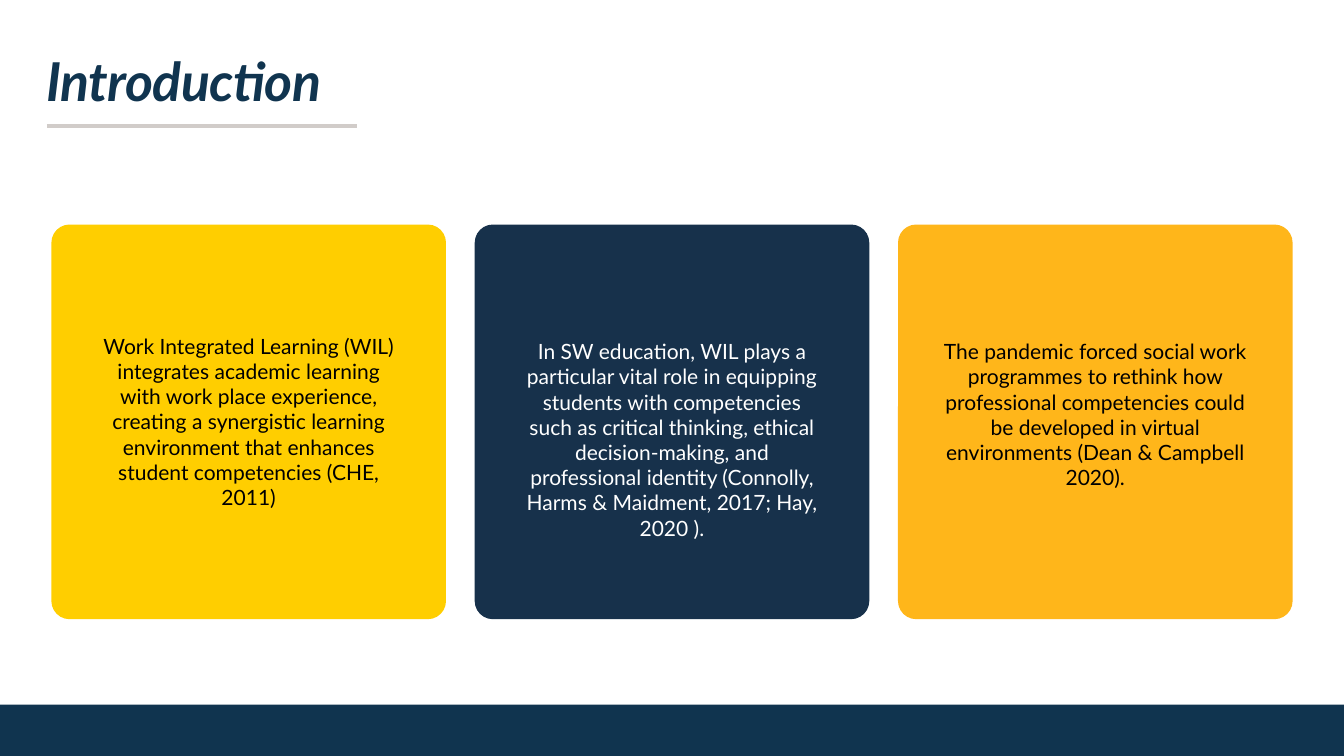
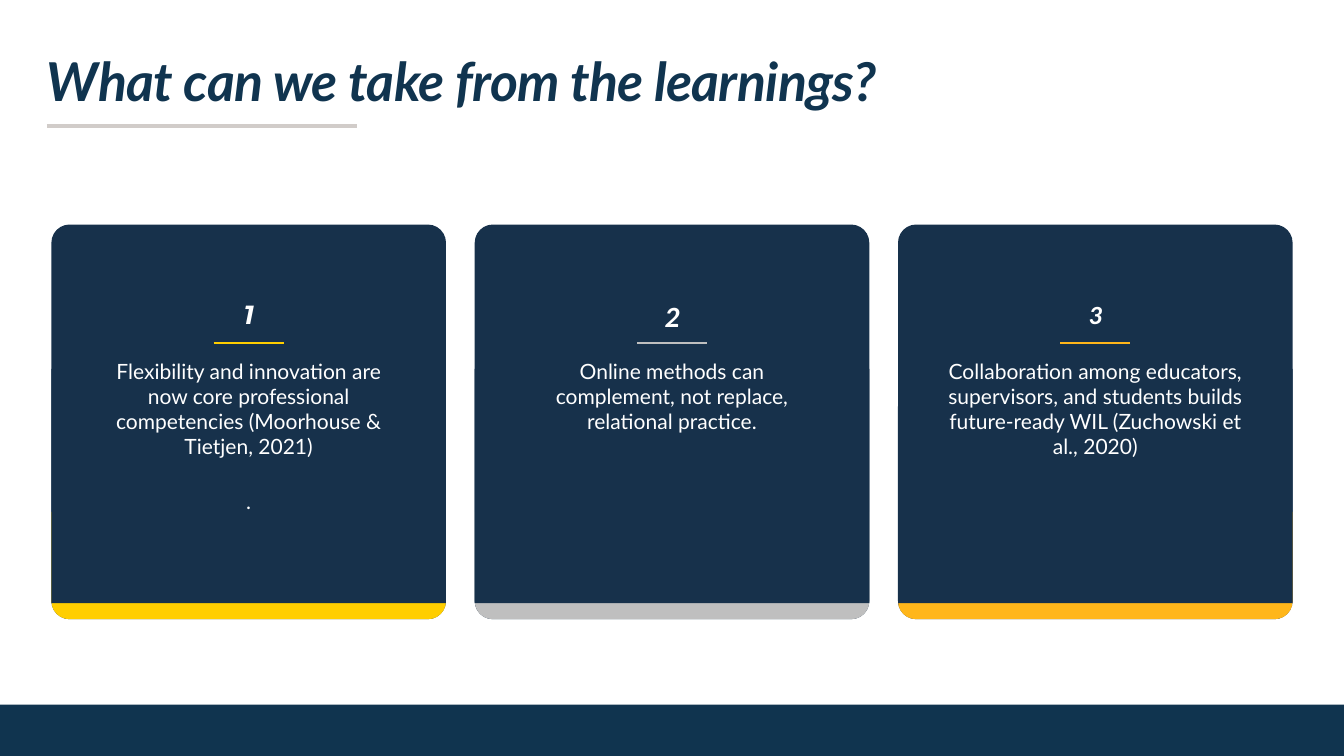
from dataclasses import dataclass

from lxml import etree
from pptx import Presentation
from pptx import util as u
from pptx.dml.color import RGBColor
from pptx.enum import shapes, text
from pptx.oxml.ns import qn


@dataclass(frozen=True)
class Theme:
    navy: str = "10344F"
    card: str = "17314B"
    yellow: str = "FFCE00"
    amber: str = "FFB61A"
    grey: str = "BFBFBF"
    rule: str = "D1CCC9"
    white: str = "FFFFFF"
    black: str = "000000"
    font: str = "Lato"
    title_size: int = 51
    body_size: int = 20


THEME = Theme()
WIDTH, HEIGHT = 17.78, 10

# Grid: three equal square cards in one row
MARGIN, TITLE_LEFT = 0.68, 0.62
CARD, CARD_TOP, COLUMNS = 5.22, 2.97, 3
PITCH = (WIDTH - 2 * MARGIN - CARD) / (COLUMNS - 1)
CORNER = 0.24
BAND, BAND_SHAPE = 0.21, 1.42
TEXT_WIDTH, NUMBER_WIDTH, RULE_WIDTH = 4.03, 3.54, 0.93


def column_left(column):
    return MARGIN + column * PITCH


def centred_left(column, width):
    return column_left(column) + (CARD - width) / 2


def add_block(page, kind, left, top, width, height, fill):
    block = page.shapes.add_shape(kind, *map(u.Inches, (left, top, width, height)))
    block.shadow.inherit = False
    block.fill.solid()
    block.fill.fore_color.rgb = RGBColor.from_string(fill)
    block.line.fill.background()
    return block


def add_rule(page, left, top, width, color, weight):
    line = page.shapes.add_connector(
        shapes.MSO_CONNECTOR.STRAIGHT,
        *map(u.Inches, (left, top, left + width, top)))
    line.line.color.rgb = RGBColor.from_string(color)
    line.line.width = u.Pt(weight)
    etree.SubElement(line._element.spPr, qn("a:effectLst"))


def add_text(page, words, left, top, width, height, *, size=THEME.body_size,
             font=THEME.font, color=THEME.white, strong=False, centred=True,
             spacing=None, gap=0):
    """Write one paragraph per line of words; gap is the space between them."""
    box = page.shapes.add_textbox(*map(u.Inches, (left, top, width, height)))
    frame = box.text_frame
    frame.word_wrap = True
    frame.auto_size = text.MSO_AUTO_SIZE.SHAPE_TO_FIT_TEXT
    frame.margin_left = frame.margin_right = frame.margin_bottom = 0
    frame.margin_top = u.Inches(0.01)
    for index, line in enumerate(words.split("\n")):
        para = frame.add_paragraph() if index else frame.paragraphs[0]
        para.alignment = text.PP_ALIGN.CENTER if centred else text.PP_ALIGN.LEFT
        if index:
            para.space_before = u.Pt(gap)
        span = para.add_run()
        span.text = line
        span.font.name, span.font.size = font, u.Pt(size)
        span.font.bold = span.font.italic = strong
        span.font.color.rgb = RGBColor.from_string(color)
        if spacing is not None:
            span._r.get_or_add_rPr().set("spc", str(int(spacing * 100)))


def add_page(deck, title):
    """Start a page with the shared footer band, title and title rule."""
    page = deck.slides.add_slide(deck.slide_layouts[6])
    add_block(page, shapes.MSO_SHAPE.RECTANGLE, 0, 9.32, WIDTH, 0.68, THEME.navy)
    add_rule(page, TITLE_LEFT, 1.67, 4.1, THEME.rule, 4)
    add_text(page, title, TITLE_LEFT, 0.63, 16.49, 0.87, size=THEME.title_size,
             color=THEME.navy, strong=True, centred=False, spacing=-0.6)
    return page


def add_card(page, column, fill):
    card = add_block(page, shapes.MSO_SHAPE.ROUNDED_RECTANGLE,
                     column_left(column), CARD_TOP, CARD, CARD, fill)
    card.adjustments[0] = CORNER / CARD


def add_card_text(page, column, words, top, height, **style):
    add_text(page, words, centred_left(column, TEXT_WIDTH), top,
             TEXT_WIDTH, height, **style)


def add_numbered_card(page, column, words, accent, number_font, number_size):
    left, bottom = column_left(column), CARD_TOP + CARD
    add_card(page, column, THEME.card)
    add_text(page, str(column + 1), centred_left(column, NUMBER_WIDTH), 3.93,
             NUMBER_WIDTH, 0.45, size=number_size, font=number_font, strong=True)
    add_rule(page, centred_left(column, RULE_WIDTH), 4.54, RULE_WIDTH, accent, 1.5)
    # Accent band: rounded base, covered down to its visible strip
    base = add_block(page, shapes.MSO_SHAPE.ROUND_2_SAME_RECTANGLE, left,
                     bottom - BAND_SHAPE, CARD, BAND_SHAPE, accent)
    base.rotation = 180
    add_block(page, shapes.MSO_SHAPE.RECTANGLE, left, 4.88, CARD,
              bottom - BAND - 4.88, THEME.card)
    add_card_text(page, column, words, 4.73, 2.03, gap=28)


def add_introduction(deck):
    page = add_page(deck, "Introduction")
    cards = [
        ("Work Integrated Learning (WIL) integrates academic learning with work "
         "place experience, creating a synergistic learning environment that "
         "enhances student competencies (CHE, 2011)",
         THEME.yellow, THEME.black, 4.4, 2.37),
        ("In SW education, WIL plays a particular vital role in equipping students "
         "with competencies such as critical thinking, ethical decision-making, and "
         "professional identity (Connolly, Harms & Maidment, 2017; Hay, 2020 ).",
         THEME.card, THEME.white, 4.47, 2.71),
        ("The pandemic forced social work programmes to rethink how professional "
         "competencies could be developed in virtual environments "
         "(Dean & Campbell 2020).",
         THEME.amber, THEME.black, 4.47, 2.03),
    ]
    for column, (words, fill, color, top, height) in enumerate(cards):
        add_card(page, column, fill)
        add_card_text(page, column, words, top, height, color=color)


def add_learnings(deck):
    page = add_page(deck, "What can we take from the learnings?")
    cards = [
        ("Flexibility and innovation are now core professional competencies "
         "(Moorhouse & Tietjen, 2021)\n.", THEME.yellow, "Montserrat", 25),
        ("Online methods can complement, not replace, relational practice.",
         THEME.grey, "Calibri", 28),
        ("Collaboration among educators, supervisors, and students builds "
         "future-ready WIL (Zuchowski et al., 2020)", THEME.amber, "Calibri", 25),
    ]
    for column, card in enumerate(cards):
        add_numbered_card(page, column, *card)


def main():
    deck = Presentation()
    deck.slide_width, deck.slide_height = u.Inches(WIDTH), u.Inches(HEIGHT)
    add_introduction(deck)
    add_learnings(deck)
    deck.save("out.pptx")


if __name__ == "__main__":
    main()
